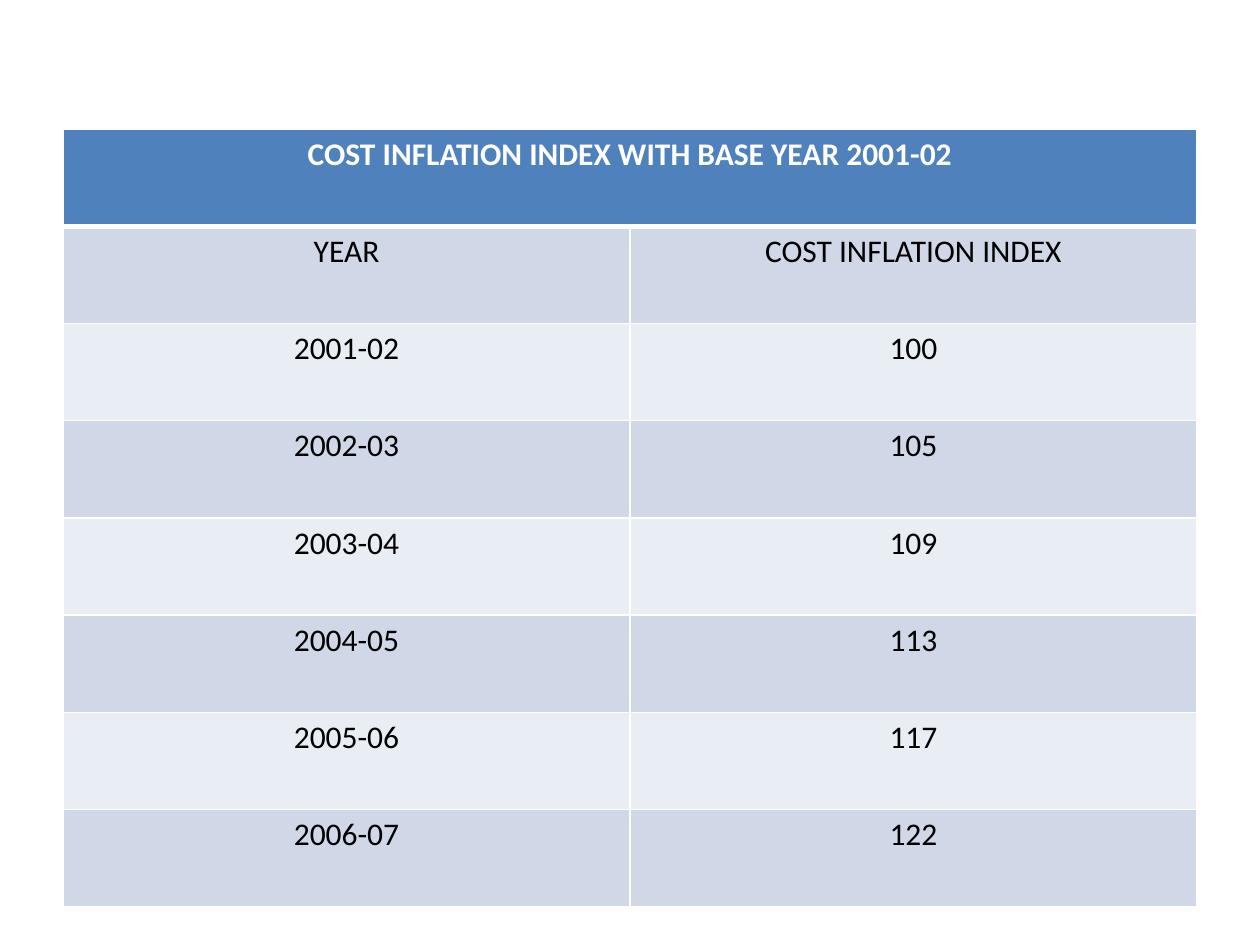
from lxml.etree import SubElement
from pptx import Presentation
from pptx.dml.color import RGBColor as RGB
from pptx.enum.text import PP_ALIGN as Align
from pptx.oxml.ns import qn
from pptx.util import Cm, Pt

COLORS = {
    "header": "4F81BD",
    "dark_band": "D0D8E8",
    "light_band": "E9EDF4",
    "border": "FFFFFF",
    "header_text": "FFFFFF",
    "body_text": "000000",
}
TITLE = "COST INFLATION INDEX WITH BASE YEAR 2001-02"
INDEX_ROWS = [
    ("YEAR", "COST INFLATION INDEX"),
    ("2001-02", "100"),
    ("2002-03", "105"),
    ("2003-04", "109"),
    ("2004-05", "113"),
    ("2005-06", "117"),
    ("2006-07", "122"),
]


def add_border(cell, side, width):
    line = SubElement(cell._tc.get_or_add_tcPr(), qn(f"a:ln{side}"), w=str(Pt(width)))
    fill = SubElement(line, qn("a:solidFill"))
    SubElement(fill, qn("a:srgbClr"), val=COLORS["border"])


prs = Presentation()
prs.slide_width, prs.slide_height = Cm(25.4), Cm(19.05)
slide = prs.slides.add_slide(prs.slide_layouts[6])

rows = [(TITLE, "")] + INDEX_ROWS
index_table = slide.shapes.add_table(
    len(rows), 2, Cm(1.27), Cm(2.6), Cm(22.86), Cm(15.68)
).table
index_table.cell(0, 0).merge(index_table.cell(0, 1))

for row, values in enumerate(rows):
    is_header = row == 0
    band = "header" if is_header else "dark_band" if row % 2 else "light_band"
    text_color = "header_text" if is_header else "body_text"
    text_format = {"name": "Calibri", "size": Pt(18), "bold": is_header}
    border_widths = {"L": 1, "R": 1, "T": 3 if row == 1 else 1, "B": 3 if is_header else 1}
    for column, value in enumerate(values):
        cell = index_table.cell(row, column)
        for side, width in border_widths.items():
            add_border(cell, side, width)
        cell.fill.solid()
        cell.fill.fore_color.rgb = RGB.from_string(COLORS[band])
        if not value:
            continue
        cell.text = value
        paragraph = cell.text_frame.paragraphs[0]
        paragraph.alignment = Align.CENTER
        font = paragraph.runs[0].font
        for attribute, setting in text_format.items():
            setattr(font, attribute, setting)
        font.color.rgb = RGB.from_string(COLORS[text_color])

prs.save("out.pptx")
